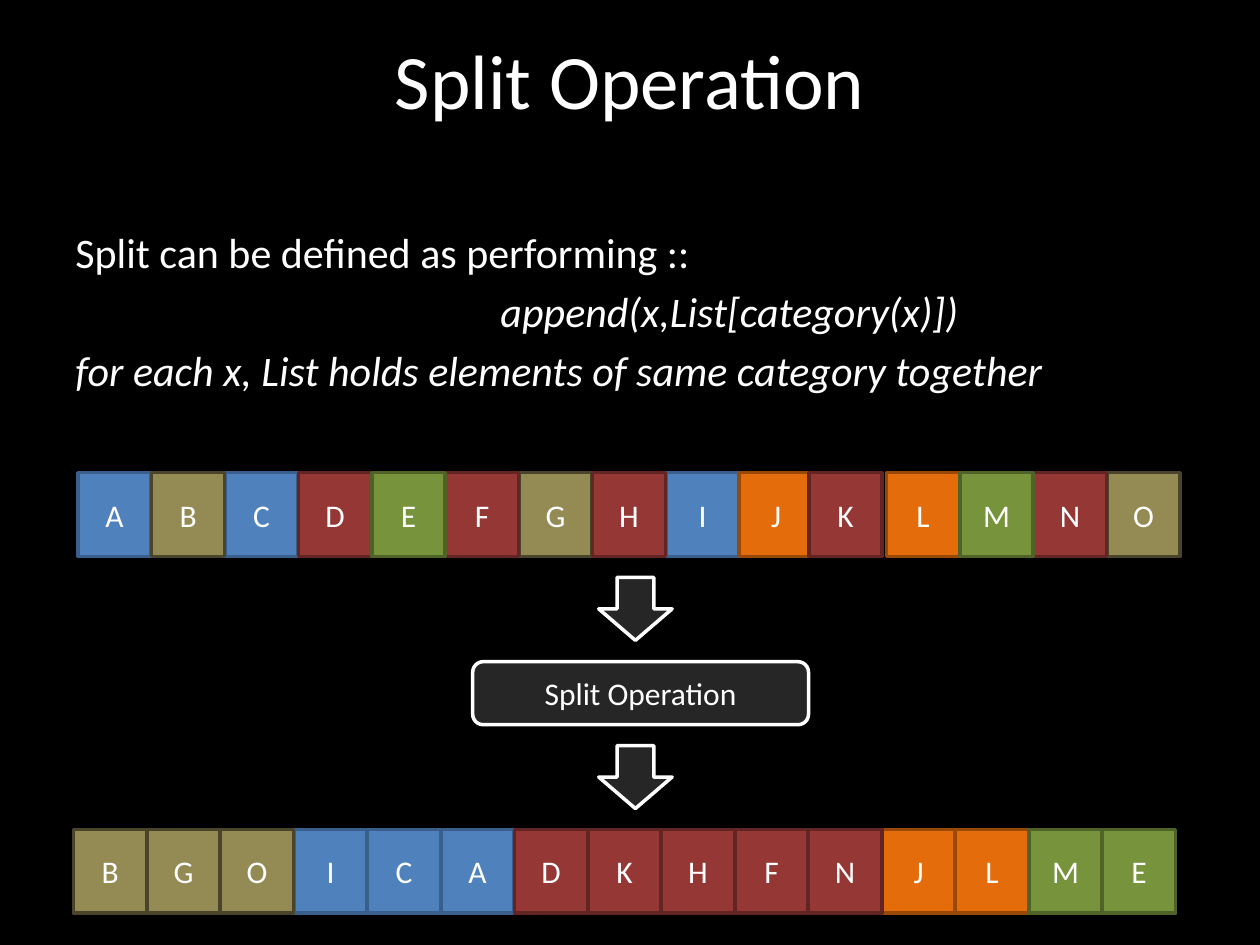
"""Build the Split Operation slide: a mixed list regrouped by category."""
from pptx import Presentation
from pptx.dml.color import RGBColor
from pptx.enum.shapes import MSO_SHAPE
from pptx.enum.text import MSO_ANCHOR, PP_ALIGN
from pptx.util import Cm, Pt

RECTANGLE = MSO_SHAPE.RECTANGLE
ROUNDED = MSO_SHAPE.ROUNDED_RECTANGLE
DOWN_ARROW = MSO_SHAPE.DOWN_ARROW
TOP, MIDDLE = MSO_ANCHOR.TOP, MSO_ANCHOR.MIDDLE
LEFT, CENTER = PP_ALIGN.LEFT, PP_ALIGN.CENTER

FONT = "Calibri"
BLACK = RGBColor(0x00, 0x00, 0x00)
WHITE = RGBColor(0xFF, 0xFF, 0xFF)
CHARCOAL = RGBColor(0x26, 0x26, 0x26)
BLUE, DARK_BLUE = RGBColor(0x4F, 0x81, 0xBD), RGBColor(0x3A, 0x5F, 0x8C)
KHAKI, DARK_KHAKI = RGBColor(0x94, 0x8A, 0x54), RGBColor(0x4A, 0x45, 0x2A)
ORANGE, DARK_ORANGE = RGBColor(0xE4, 0x6C, 0x0A), RGBColor(0x98, 0x48, 0x07)
RED, DARK_RED = RGBColor(0x95, 0x37, 0x35), RGBColor(0x63, 0x25, 0x23)
GREEN, DARK_GREEN = RGBColor(0x77, 0x93, 0x3C), RGBColor(0x4F, 0x62, 0x28)

TITLE = "Split Operation"
DEFINITION = [
    ("Split can be defined as performing ::", False, 0),
    ("append(x,List[category(x)])", True, 8.57),
    ("for each x, List holds elements of same category together", True, 0),
]
CATEGORIES = [
    ("AIC", BLUE, DARK_BLUE),
    ("BGO", KHAKI, DARK_KHAKI),
    ("JL", ORANGE, DARK_ORANGE),
    ("HNFDK", RED, DARK_RED),
    ("ME", GREEN, DARK_GREEN),
]
ROWS = [
    ("ABCDEFGHIJKLMNO", 1.57, 9.53, {"K": -0.08}),
    ("BGOICADKHFNJLME", 1.48, 16.72, {}),
]
CELL_WIDTH, CELL_HEIGHT = 1.48, 1.69
ARROW_TOPS = [11.64, 15.03]


def write(frame, text, size=18, italic=False, align=CENTER, anchor=MIDDLE,
          indent=0, before=0, first=True):
    """Add one formatted paragraph to a text frame."""
    frame.word_wrap = True
    frame.vertical_anchor = anchor
    paragraph = frame.paragraphs[0] if first else frame.add_paragraph()
    paragraph.alignment = align
    paragraph.space_before = Pt(before)
    if indent:
        paragraph._p.get_or_add_pPr().set("marL", str(Cm(indent)))
    run = paragraph.add_run()
    run.text = text
    run.font.name = FONT
    run.font.size = Pt(size)
    run.font.italic = italic
    run.font.color.rgb = WHITE


def add_block(slide, kind, box, fill=CHARCOAL, line=WHITE, text=None):
    """Add a filled, outlined shape with an optional label."""
    shape = slide.shapes.add_shape(kind, *map(Cm, box))
    shape.shadow.inherit = False
    shape.fill.solid()
    shape.fill.fore_color.rgb = fill
    shape.line.color.rgb = line
    shape.line.width = Pt(2)
    if text:
        write(shape.text_frame, text)


def add_row(slide, letters, left, top, nudges):
    """Lay out one row of cells, stacked by category."""
    pitch = 4.445 / 3
    for members, fill, line in CATEGORIES:
        for letter in members:
            x = left + letters.index(letter) * pitch + nudges.get(letter, 0)
            box = (x, top, CELL_WIDTH, CELL_HEIGHT)
            add_block(slide, RECTANGLE, box, fill, line, letter)


def main():
    """Compose and save the slide."""
    presentation = Presentation()
    presentation.slide_width, presentation.slide_height = Cm(25.4), Cm(19.05)
    slide = presentation.slides.add_slide(presentation.slide_layouts[6])
    slide.background.fill.solid()
    slide.background.fill.fore_color.rgb = BLACK

    title = slide.shapes.add_textbox(Cm(1.27), Cm(0), Cm(22.86), Cm(3.18))
    write(title.text_frame, TITLE, size=44)
    body = slide.shapes.add_textbox(Cm(1.27), Cm(4.45), Cm(22.86), Cm(4.45))
    for index, (text, italic, indent) in enumerate(DEFINITION):
        write(body.text_frame, text, size=24, italic=italic, align=LEFT,
              anchor=TOP, indent=indent, before=4.8, first=index == 0)

    add_block(slide, ROUNDED, (9.53, 13.34, 6.77, 1.27), text=TITLE)
    for top in ARROW_TOPS:
        add_block(slide, DOWN_ARROW, (12.07, top, CELL_WIDTH, 1.27))
    for row in ROWS:
        add_row(slide, *row)
    presentation.save("out.pptx")


if __name__ == "__main__":
    main()
